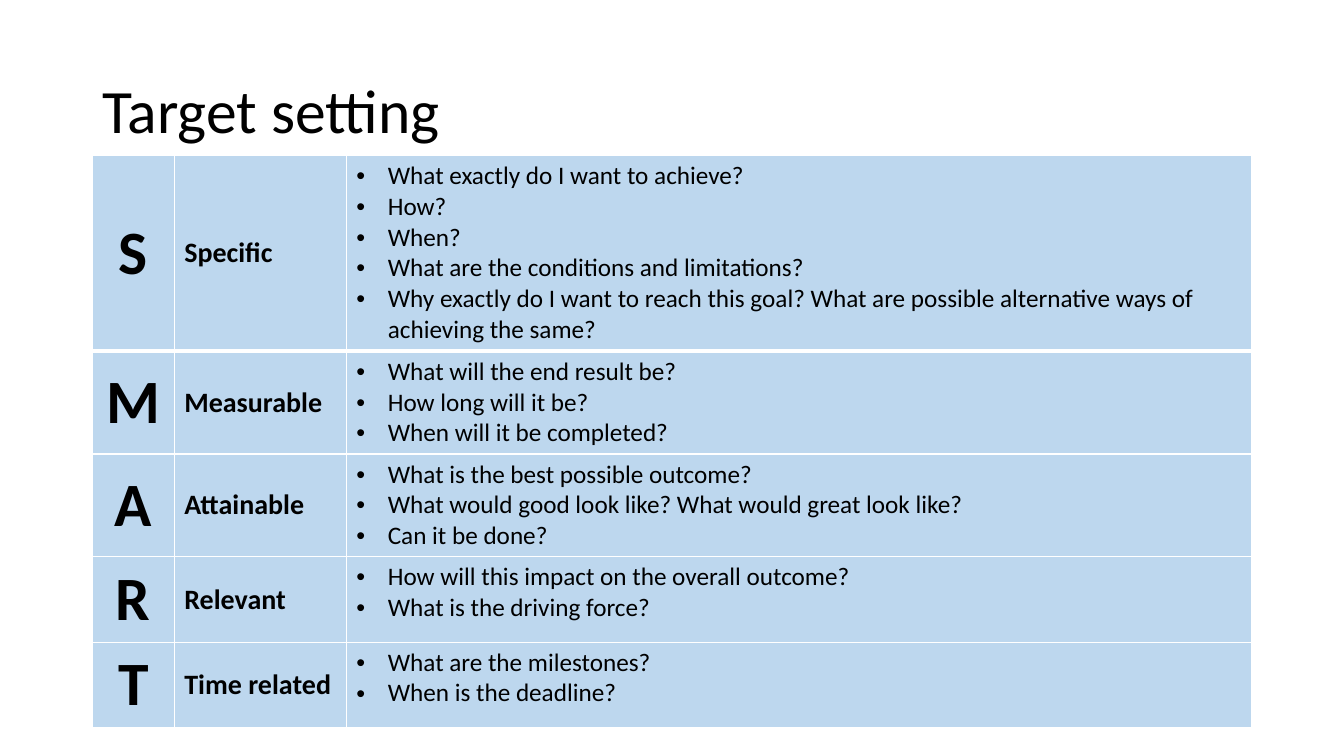
import lxml.etree
import pptx
import pptx.dml.color
import pptx.enum.text
import pptx.oxml.ns
import pptx.util
from pptx.util import Cm

BLACK = pptx.dml.color.RGBColor(0x00, 0x00, 0x00)
WHITE = pptx.dml.color.RGBColor(0xFF, 0xFF, 0xFF)
PALE_BLUE = pptx.dml.color.RGBColor(0xBD, 0xD7, 0xEE)
FONT = "Calibri"
MIDDLE = pptx.enum.text.MSO_ANCHOR.MIDDLE
TOP = pptx.enum.text.MSO_ANCHOR.TOP
LEFT = pptx.enum.text.PP_ALIGN.LEFT
CENTER = pptx.enum.text.PP_ALIGN.CENTER

COLUMN_WIDTHS = [Cm(2.06), Cm(4.34), Cm(22.81)]
BULLET_INDENT = Cm(0.79)

# Row height, letter, meaning, questions
TARGETS = [
    (Cm(4.93), "S", "Specific", [
        "What exactly do I want to achieve?",
        "How?",
        "When?",
        "What are the conditions and limitations?",
        "Why exactly do I want to reach this goal? What are possible "
        "alternative ways of achieving the same?",
    ]),
    (Cm(2.59), "M", "Measurable", [
        "What will the end result be?",
        "How long will it be?",
        "When will it be completed?",
    ]),
    (Cm(2.59), "A", "Attainable", [
        "What is the best possible outcome?",
        "What would good look like? What would great look like?",
        "Can it be done?",
    ]),
    (Cm(2.15), "R", "Relevant", [
        "How will this impact on the overall outcome?",
        "What is the driving force?",
    ]),
    (Cm(2.15), "T", "Time related", [
        "What are the milestones?",
        "When is the deadline?",
    ]),
]


def add_run(paragraph, text, size, bold=False):
    run = paragraph.add_run()
    run.text = text
    run.font.name = FONT
    run.font.size = pptx.util.Pt(size)
    run.font.bold = bold
    run.font.color.rgb = BLACK


def add_bullet(paragraph):
    properties = paragraph._p.get_or_add_pPr()
    properties.set("marL", str(BULLET_INDENT))
    properties.set("indent", str(-BULLET_INDENT))
    for tag, attribute, value in (("a:buFont", "typeface", "Arial"),
                                  ("a:buChar", "char", "•")):
        element = lxml.etree.SubElement(properties, pptx.oxml.ns.qn(tag))
        element.set(attribute, value)


def set_borders(cell, top, bottom):
    """Draw white borders; top and bottom are widths in points."""
    properties = cell._tc.get_or_add_tcPr()
    for side, width in (("L", 1), ("R", 1), ("T", top), ("B", bottom)):
        line = lxml.etree.SubElement(properties, pptx.oxml.ns.qn(f"a:ln{side}"))
        line.set("w", str(pptx.util.Pt(width)))
        fill = lxml.etree.SubElement(line, pptx.oxml.ns.qn("a:solidFill"))
        color = lxml.etree.SubElement(fill, pptx.oxml.ns.qn("a:srgbClr"))
        color.set("val", str(WHITE))


def fill_cell(cell, texts, size, bold=False, alignment=LEFT, anchor=MIDDLE, bullets=False):
    cell.fill.solid()
    cell.fill.fore_color.rgb = PALE_BLUE
    cell.vertical_anchor = anchor
    for index, text in enumerate(texts):
        frame = cell.text_frame
        paragraph = frame.add_paragraph() if index else frame.paragraphs[0]
        paragraph.alignment = alignment
        if bullets:
            add_bullet(paragraph)
        add_run(paragraph, text, size, bold)


def place_title(slide, left, top, width, height):
    title = slide.shapes.title
    title.left, title.top, title.width, title.height = left, top, width, height
    frame = title.text_frame
    frame.auto_size = pptx.enum.text.MSO_AUTO_SIZE.NONE
    frame.vertical_anchor = MIDDLE
    paragraph = frame.paragraphs[0]
    paragraph.alignment = LEFT
    paragraph.line_spacing = 0.9
    add_run(paragraph, "Target setting", 44)


def add_target_table(slide, left, top, width, height):
    table = slide.shapes.add_table(
        len(TARGETS), len(COLUMN_WIDTHS), left, top, width, height).table
    table.first_row = False
    table.horz_banding = False
    for column, column_width in zip(table.columns, COLUMN_WIDTHS):
        column.width = column_width
    for index, (row_height, letter, meaning, questions) in enumerate(TARGETS):
        row = table.rows[index]
        row.height = row_height
        for cell in row.cells:
            set_borders(cell, top=3 if index == 1 else 1, bottom=3 if index == 0 else 1)
        letter_cell, meaning_cell, question_cell = row.cells
        fill_cell(letter_cell, [letter], 44, bold=True, alignment=CENTER)
        fill_cell(meaning_cell, [meaning], 20, bold=True)
        fill_cell(question_cell, questions, 18, anchor=TOP, bullets=True)


def main():
    presentation = pptx.Presentation()
    presentation.slide_width = Cm(33.87)
    presentation.slide_height = Cm(19.05)
    slide = presentation.slides.add_slide(presentation.slide_layouts[5])
    left, width = Cm(2.33), sum(COLUMN_WIDTHS)
    place_title(slide, left, Cm(1.01), width, Cm(3.68))
    add_target_table(slide, left, Cm(3.92), width, sum(target[0] for target in TARGETS))
    presentation.save("out.pptx")


if __name__ == "__main__":
    main()
